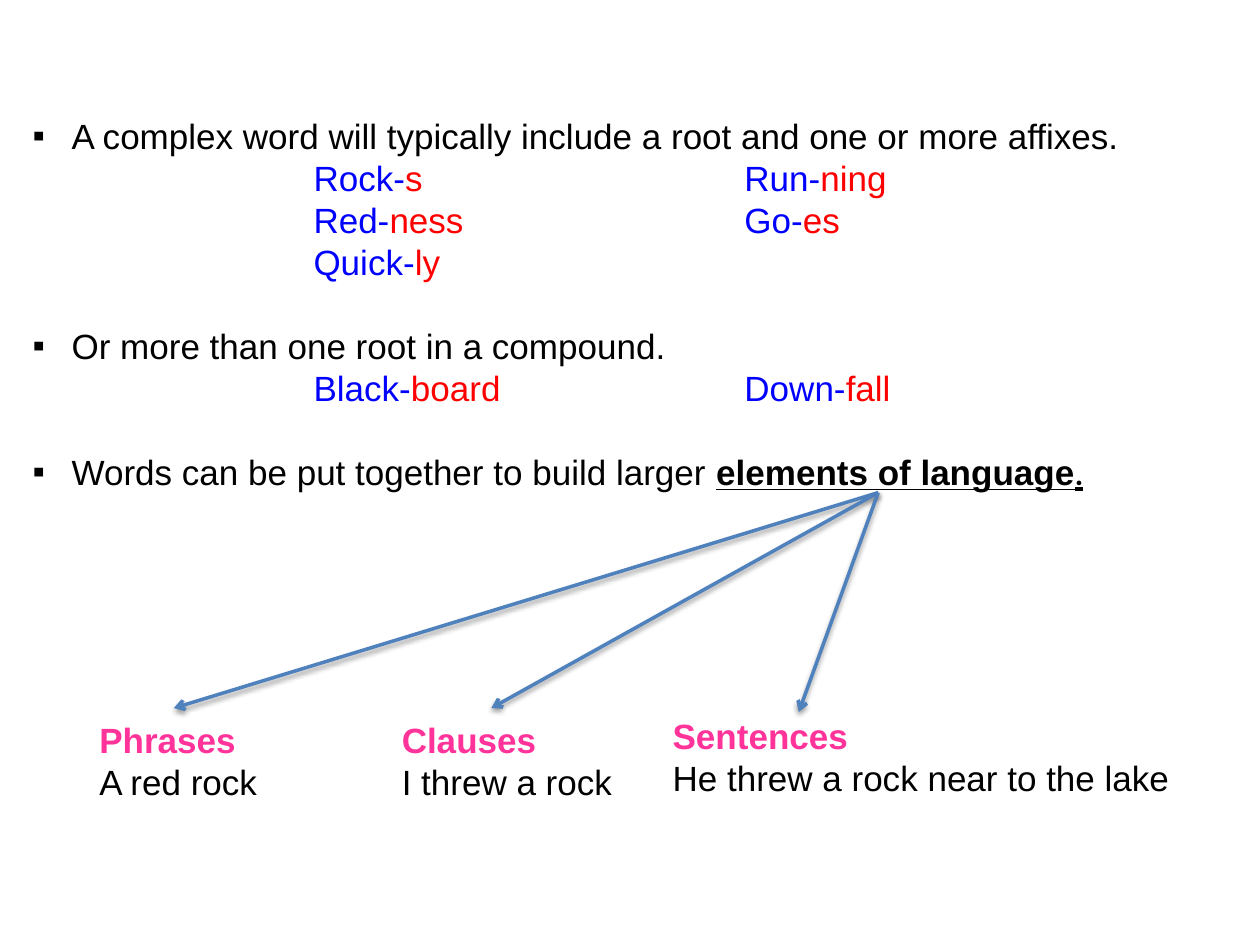
from lxml import etree
from pptx import Presentation
from pptx.dml.color import RGBColor
from pptx.enum.shapes import MSO_CONNECTOR as Connector
from pptx.oxml import parse_xml
from pptx.oxml.ns import nsdecls, qn
from pptx.util import Inches, Pt

BLACK, ROOT, AFFIX, HEADING, ARROW = "000000", "0000FF", "FF0000", "FF3399", "4F81BD"
INDENT = 0.31
EXAMPLE_COLUMNS = (2.23, 5.65)
LINE_HEIGHT = 24
ARROW_START = (6.97, 3.91)

BULLETS = [
    ("A complex word will typically include a root and one or more affixes.",
     [[("Rock-", "s"), ("Run-", "ning")],
      [("Red-", "ness"), ("Go-", "es")],
      [("Quick-", "ly")]]),
    ("Or more than one root in a compound.",
     [[("Black-", "board"), ("Down-", "fall")]]),
    ("Words can be put together to build larger ", []),
]
ELEMENTS = [
    ("Phrases", "A red rock", (0.69, 5.65, 1.77, 0.77), (1.38, 5.62)),
    ("Clauses", "I threw a rock", (3.09, 5.65, 2.05, 0.77), (3.9, 5.62)),
    ("Sentences", "He threw a rock near to the lake", (5.24, 5.62, 4.17, 0.77), (6.34, 5.65)),
]


def rgb(value):
    """Turn a hex string into a colour."""
    return RGBColor.from_string(value)


def add_text(paragraph, text, color=BLACK, size=20, font="Arial", bold=False, underline=False):
    """Append a formatted run to a paragraph."""
    run = paragraph.add_run()
    run.text = text
    run.font.size, run.font.name = Pt(size), font
    run.font.bold, run.font.underline = bold, underline
    run.font.color.rgb = rgb(color)


def add_frame(slide, left, top, width, height):
    """Add a wrapping text box and return its text frame."""
    frame = slide.shapes.add_textbox(*map(Inches, (left, top, width, height))).text_frame
    frame.word_wrap = True
    return frame


def add_line(frame, gap=0):
    """Return the next paragraph, set to the common line height."""
    first = frame.paragraphs[0]
    line = frame.add_paragraph() if first.runs else first
    line.line_spacing, line.space_before = Pt(LINE_HEIGHT), Pt(gap)
    return line


def add_bullet(frame, text, gap):
    """Add a statement with a square bullet and a hanging indent."""
    line = add_line(frame, gap)
    properties = line._p.get_or_add_pPr()
    properties.set("marL", str(Inches(INDENT)))
    properties.set("indent", str(-Inches(INDENT)))
    etree.SubElement(properties, qn("a:buFont"), typeface="Arial")
    etree.SubElement(properties, qn("a:buChar"), char="▪")
    add_text(line, text)
    return line


def add_examples(frame, words):
    """Add a line of two-coloured words aligned on tab stops."""
    line = add_line(frame)
    tabs = etree.SubElement(line._p.get_or_add_pPr(), qn("a:tabLst"))
    for column in EXAMPLE_COLUMNS:
        etree.SubElement(tabs, qn("a:tab"), pos=str(Inches(column)), algn="l")
    for root, ending in words:
        add_text(line, "\t" + root, color=ROOT)
        add_text(line, ending, color=AFFIX)


def add_element(slide, heading, example, box):
    """Add a language element with its example below."""
    frame = add_frame(slide, *box)
    add_text(add_line(frame), heading, color=HEADING, bold=True)
    add_text(add_line(frame), example)


def add_arrow(slide, start, end):
    """Add an arrow with a soft shadow below it."""
    arrow = slide.shapes.add_connector(Connector.STRAIGHT, *map(Inches, start + end))
    arrow.line.color.rgb, arrow.line.width = rgb(ARROW), Pt(2)
    etree.SubElement(arrow.line._get_or_add_ln(), qn("a:tailEnd"), type="arrow")
    arrow._element.spPr.append(parse_xml(
        f'<a:effectLst {nsdecls("a")}><a:outerShdw blurRad="{Pt(3.1)}" dist="{Pt(1.6)}" '
        'dir="5400000" rotWithShape="0"><a:srgbClr val="000000"><a:alpha val="38000"/>'
        '</a:srgbClr></a:outerShdw></a:effectLst>'))


def main():
    """Build the slide and save it."""
    deck = Presentation()
    deck.slide_width, deck.slide_height = Inches(10), Inches(7.5)
    slide = deck.slides.add_slide(deck.slide_layouts[6])

    statements = add_frame(slide, 0.16, 0.86, 9.25, 4.34)
    for index, (text, examples) in enumerate(BULLETS):
        statement = add_bullet(statements, text, gap=LINE_HEIGHT if index else 0)
        for words in examples:
            add_examples(statements, words)
    add_text(statement, "elements of language", bold=True, underline=True)
    add_text(statement, ".", size=18, font="Calibri", bold=True, underline=True)

    for heading, example, box, arrow_end in ELEMENTS:
        add_element(slide, heading, example, box)
        add_arrow(slide, ARROW_START, arrow_end)
    deck.save("out.pptx")


if __name__ == "__main__":
    main()
